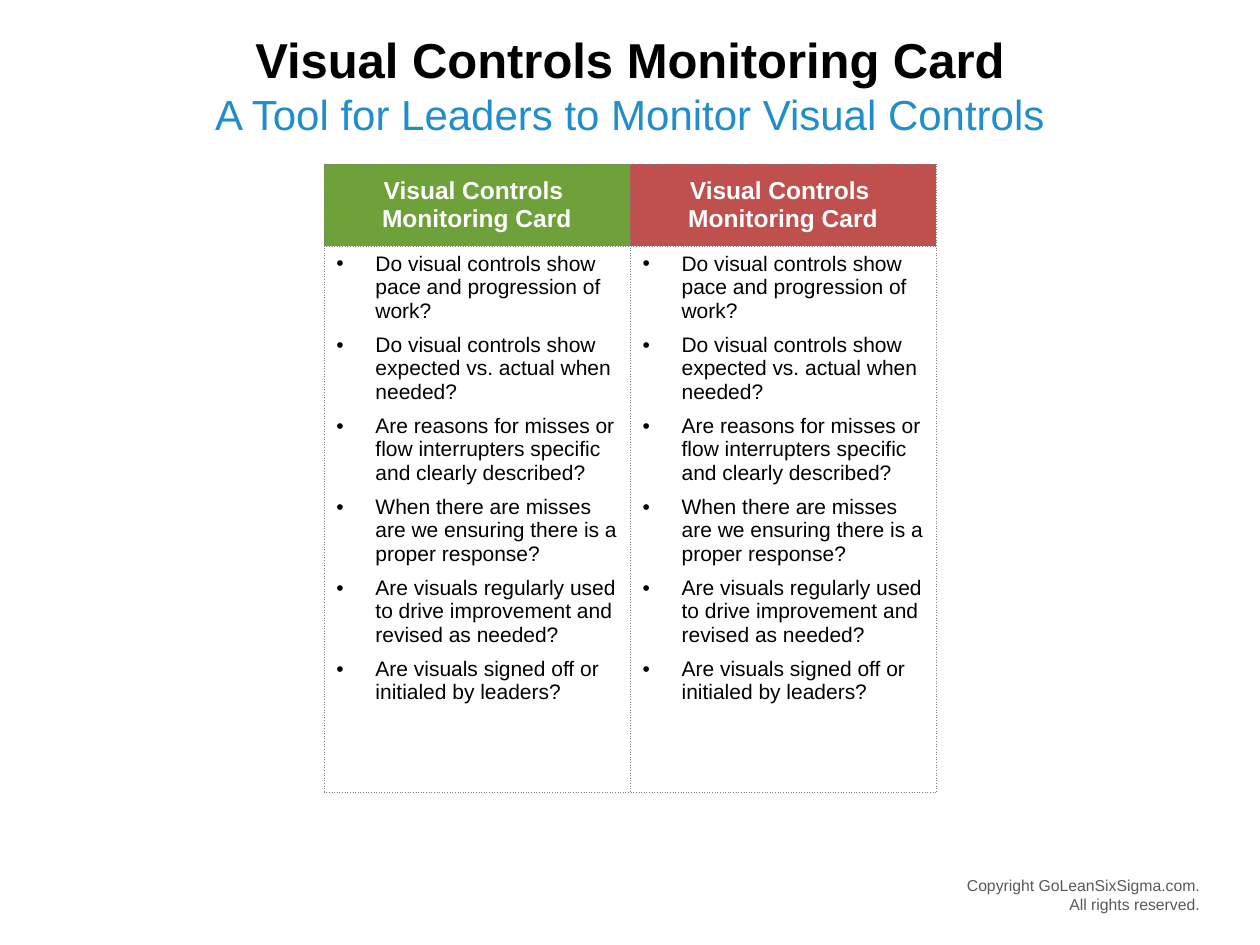
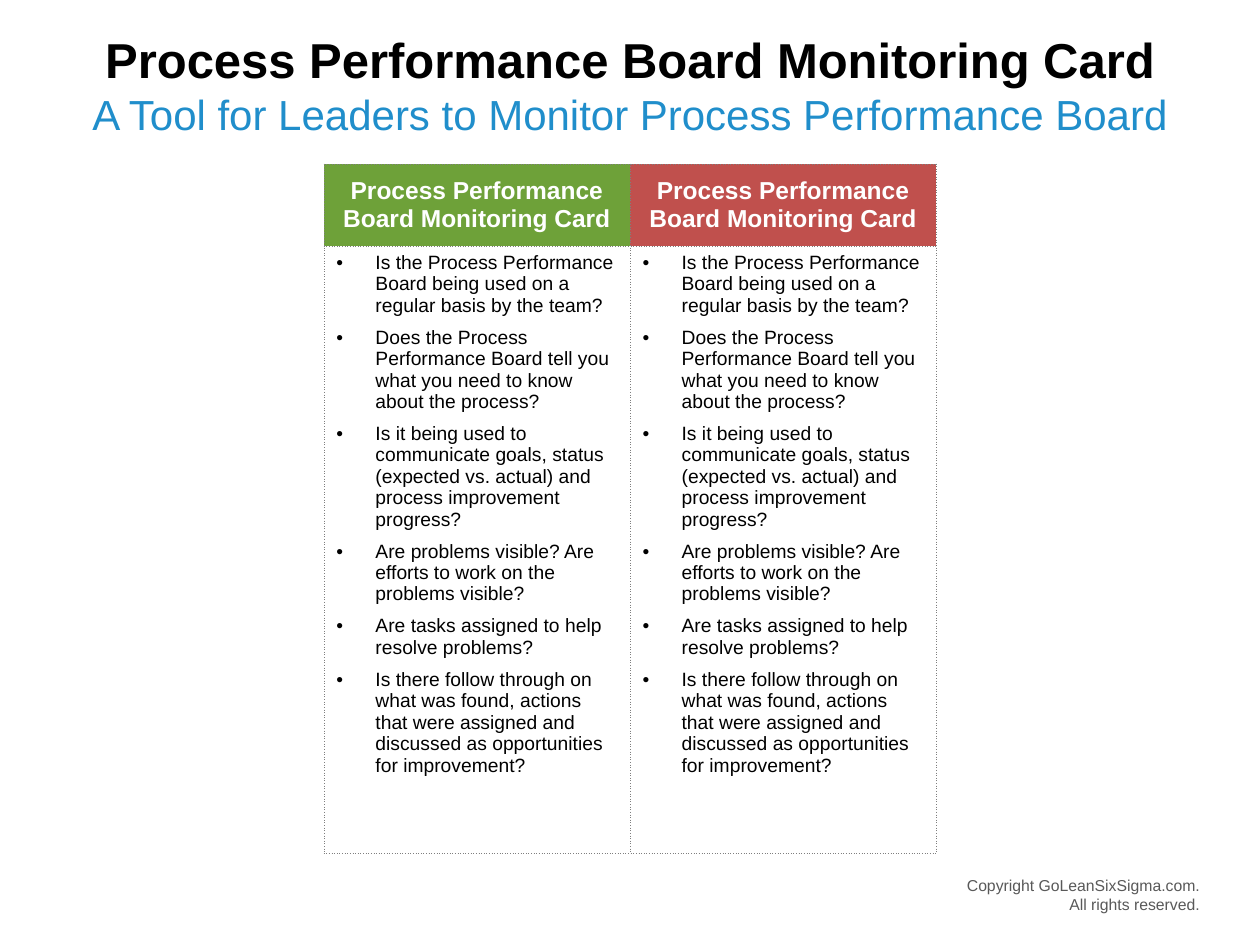
"""Build two monitoring card slides, each with a pair of identical checklists."""
import pptx
import pptx.dml.color
import pptx.enum.text
import pptx.oxml
import pptx.oxml.ns
import pptx.util
from lxml import etree

RGBColor = pptx.dml.color.RGBColor
Inches = pptx.util.Inches
Pt = pptx.util.Pt
ALIGN = pptx.enum.text.PP_ALIGN
ANCHOR = pptx.enum.text.MSO_ANCHOR

CARDS = [
    {
        "title": "Visual Controls Monitoring Card",
        "subtitle": "A Tool for Leaders to Monitor Visual Controls",
        "heading": "Visual Controls \vMonitoring Card",
        "text_size": 12,
        "body_height": 4.34,
        "questions": [
            "Do visual controls show pace and progression of work?",
            "Do visual controls show expected vs. actual when needed?",
            "Are reasons for misses or flow interrupters specific and clearly described?",
            "When there are misses are we ensuring there is a proper response?",
            "Are visuals regularly used to drive improvement and revised as needed?",
            "Are visuals signed off or initialed by leaders?",
        ],
    },
    {
        "title": "Process Performance Board Monitoring Card",
        "subtitle": "A Tool for Leaders to Monitor Process Performance Board",
        "heading": "Process Performance Board Monitoring Card",
        "text_size": 11,
        "body_height": 4.82,
        "questions": [
            "Is the Process Performance Board being used on a regular basis by the team?",
            "Does the Process Performance Board tell you what you need to know about the process?",
            "Is it being used to communicate goals, status (expected vs. actual) and process "
            "improvement progress?",
            "Are problems visible? Are efforts to work on the problems visible?",
            "Are tasks assigned to help resolve problems?",
            "Is there follow through on what was found, actions that were assigned and "
            "discussed as opportunities for improvement?",
        ],
    },
]
COPYRIGHT = "Copyright GoLeanSixSigma.com.\vAll rights reserved."

FONT = "Arial"
BLACK = RGBColor(0x00, 0x00, 0x00)
WHITE = RGBColor(0xFF, 0xFF, 0xFF)
BLUE = RGBColor(0x20, 0x8E, 0xCB)
GREY = RGBColor(0x59, 0x59, 0x59)
BORDER = RGBColor(0x7F, 0x7F, 0x7F)
HEADING_FILLS = [RGBColor(0x6E, 0xA1, 0x39), RGBColor(0xC0, 0x50, 0x4D)]

WIDTH, HEIGHT = 10, 7.5
MARGIN = WIDTH / 20
TABLE_TOP = 1.3
COLUMN_WIDTH = 2.43
HEADING_HEIGHT = 0.65
INDENT = Inches(0.31)


def write(para, text, size, color, align=ALIGN.LEFT, bold=False):
    para.text = text
    para.alignment = align
    para.font.name = FONT
    para.font.size = Pt(size)
    para.font.bold = bold
    para.font.color.rgb = color


def add_text(page, area, text, size, color, align):
    box = page.shapes.add_textbox(*map(Inches, area))
    box.text_frame.word_wrap = True
    write(box.text_frame.paragraphs[0], text, size, color, align)


def add_title(page, text):
    title = page.shapes.title
    title.left, title.top = Inches(MARGIN), Inches(0.14)
    title.width, title.height = Inches(WIDTH - 2 * MARGIN), Inches(0.65)
    frame = title.text_frame
    frame.auto_size = pptx.enum.text.MSO_AUTO_SIZE.NONE
    frame.vertical_anchor = ANCHOR.MIDDLE
    write(frame.paragraphs[0], text, 28, BLACK, ALIGN.CENTER, True)


def add_borders(cell):
    properties = cell._tc.get_or_add_tcPr()
    for side in "LRTB":
        properties.append(pptx.oxml.parse_xml(
            f'<a:ln{side} {pptx.oxml.ns.nsdecls("a")} w="{Pt(0.25)}">'
            f'<a:solidFill><a:srgbClr val="{BORDER}"/></a:solidFill>'
            f'<a:prstDash val="sysDot"/></a:ln{side}>'))


def add_bullet(para):
    properties = para._p.get_or_add_pPr()
    properties.set("marL", str(INDENT))
    properties.set("indent", str(-INDENT))
    etree.SubElement(properties, pptx.oxml.ns.qn("a:buFont"), typeface=FONT)
    etree.SubElement(properties, pptx.oxml.ns.qn("a:buChar"), char="•")


def fill_heading(cell, text, color):
    add_borders(cell)
    cell.fill.solid()
    cell.fill.fore_color.rgb = color
    cell.vertical_anchor = ANCHOR.MIDDLE
    write(cell.text_frame.paragraphs[0], text, 14, WHITE, ALIGN.CENTER, True)


def fill_questions(cell, questions, size):
    add_borders(cell)
    cell.fill.background()
    frame = cell.text_frame
    for index, question in enumerate(questions):
        para = frame.add_paragraph() if index else frame.paragraphs[0]
        add_bullet(para)
        write(para, question, size, BLACK)
        para.space_after = Pt(6)


def add_checklists(page, card):
    columns = len(HEADING_FILLS)
    width = columns * COLUMN_WIDTH
    heights = HEADING_HEIGHT, card["body_height"]
    area = (WIDTH - width) / 2, TABLE_TOP, width, sum(heights)
    table = page.shapes.add_table(len(heights), columns, *map(Inches, area)).table
    table.first_row = table.horz_banding = False
    for row, height in zip(table.rows, heights):
        row.height = Inches(height)
    for column, color in enumerate(HEADING_FILLS):
        table.columns[column].width = Inches(COLUMN_WIDTH)
        fill_heading(table.cell(0, column), card["heading"], color)
        fill_questions(table.cell(1, column), card["questions"], card["text_size"])


def add_card(deck, card):
    page = deck.slides.add_slide(deck.slide_layouts[5])
    add_text(page, (6.15, 6.9, 3.47, 0.4), COPYRIGHT, 9, GREY, ALIGN.RIGHT)
    add_checklists(page, card)
    add_title(page, card["title"])
    add_text(page, (0, 0.65, WIDTH, 0.5), card["subtitle"], 24, BLUE, ALIGN.CENTER)


def main():
    deck = pptx.Presentation()
    deck.slide_width, deck.slide_height = Inches(WIDTH), Inches(HEIGHT)
    for card in CARDS:
        add_card(deck, card)
    deck.save("out.pptx")


if __name__ == "__main__":
    main()
